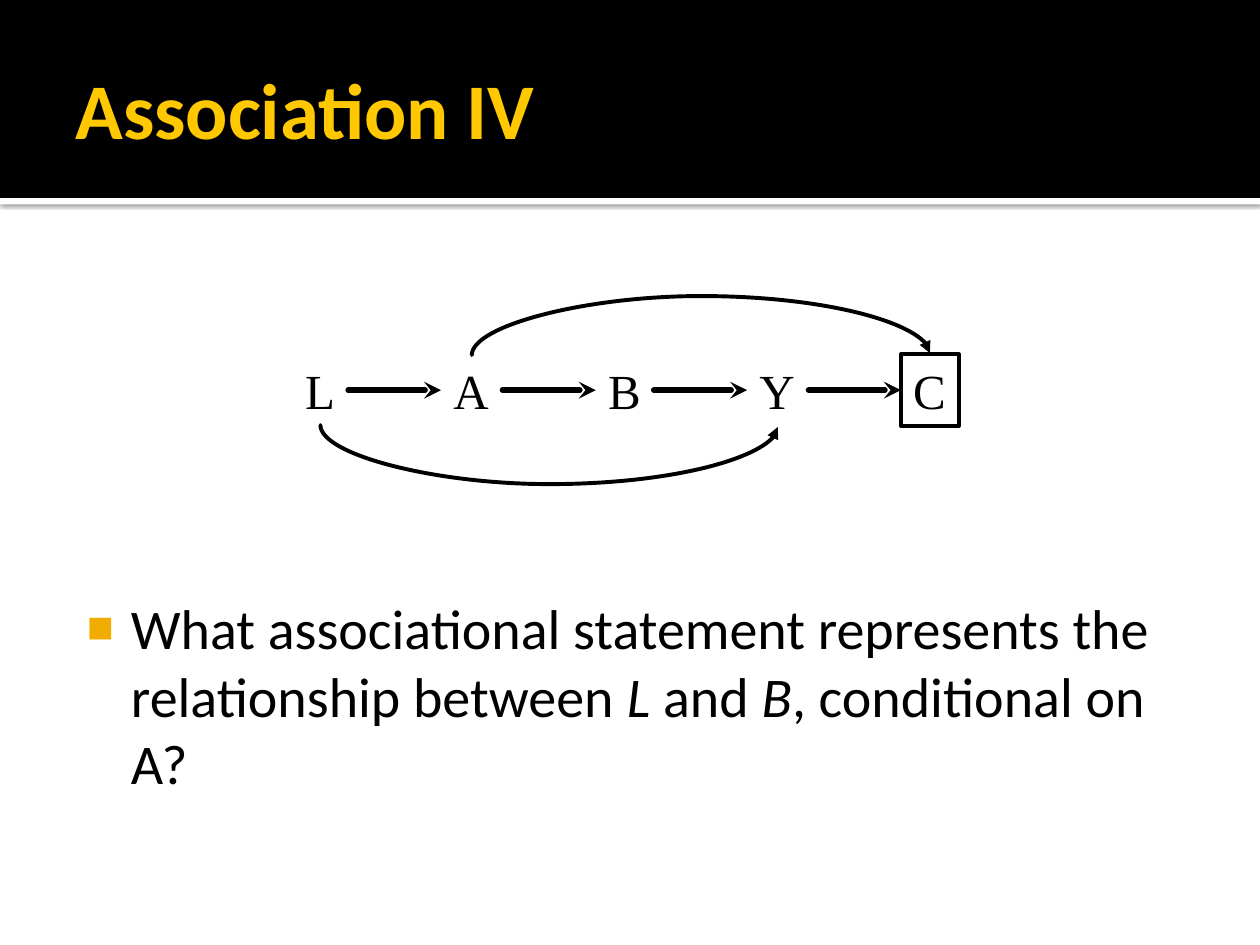
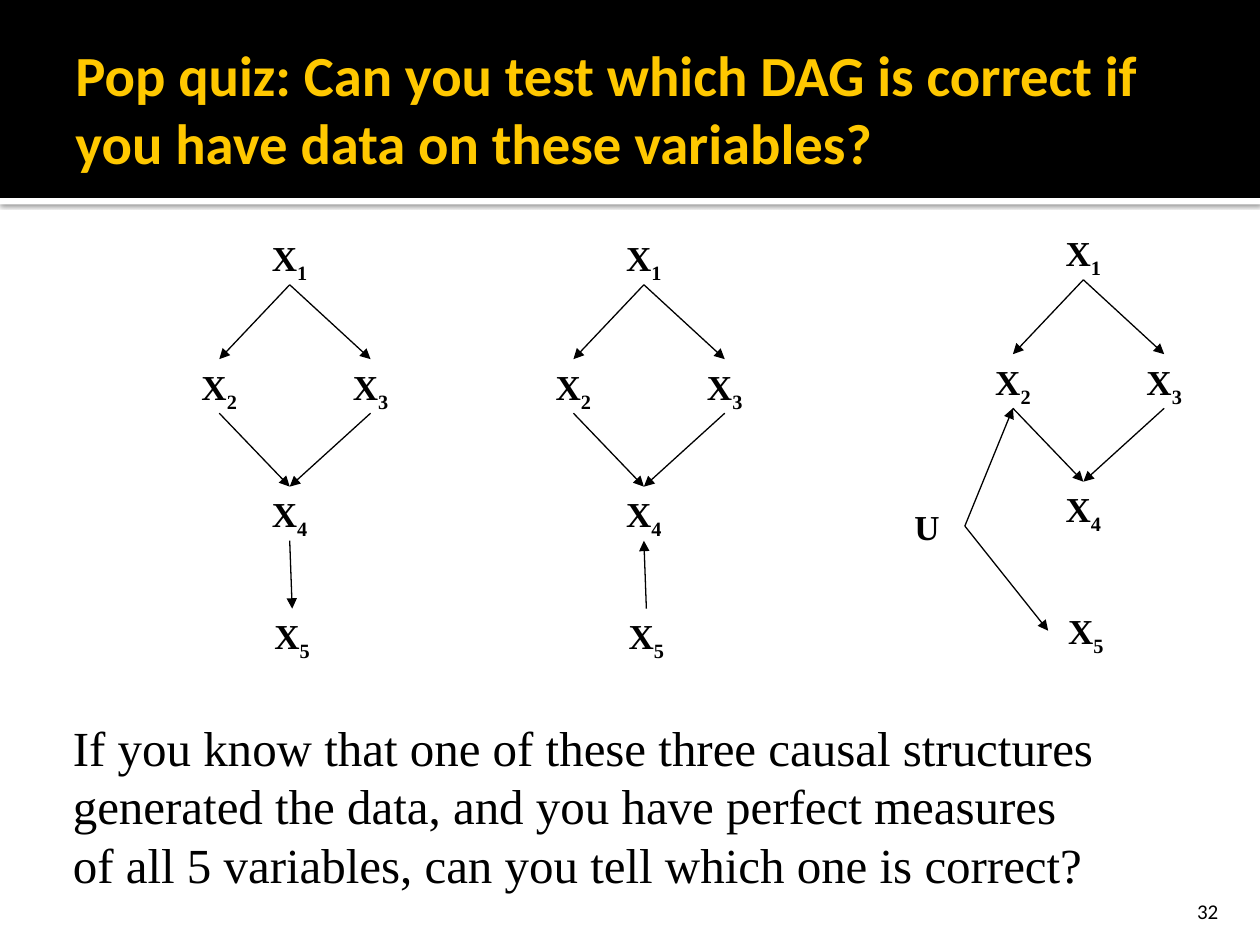
from dataclasses import dataclass

import lxml.etree
import pptx
import pptx.dml.color
import pptx.enum.shapes
import pptx.enum.text
import pptx.oxml.ns
import pptx.util

Cm = pptx.util.Cm
Pt = pptx.util.Pt
qn = pptx.oxml.ns.qn
Align = pptx.enum.text.PP_ALIGN
Anchor = pptx.enum.text.MSO_ANCHOR
AutoSize = pptx.enum.text.MSO_AUTO_SIZE
Connector = pptx.enum.shapes.MSO_CONNECTOR
RECTANGLE = pptx.enum.shapes.MSO_SHAPE.RECTANGLE

COLOURS = {"ink": "000000", "paper": "FFFFFF", "title": "FFC800", "bullet": "F0AD00"}
SANS, SERIF = "Calibri", "Times New Roman"
TOP, LEFT, BOTTOM, RIGHT = range(4)
CURVE_DEPTH, CURVE_DROP = Cm(1.19), Cm(0.04)


@dataclass(frozen=True)
class Run:
    text: str
    italic: bool = False
    subscript: bool = False


@dataclass(frozen=True)
class Variable:
    name: str
    left: float
    top: float
    width: float
    height: float
    conditioned: bool = False


@dataclass(frozen=True)
class Edge:
    cause: str
    effect: str
    leave: int = BOTTOM
    enter: int = TOP


@dataclass(frozen=True)
class Dag:
    left: float
    top: float
    edges: tuple[Edge, ...]
    has_unmeasured: bool = False


CHAIN = [
    Variable("L", 5.9, 7.14, 1.12, 1.45),
    Variable("A", 8.89, 7.14, 1.24, 1.45),
    Variable("B", 12.01, 7.14, 1.17, 1.45),
    Variable("Y", 15.06, 7.14, 1.24, 1.45),
    Variable("C", 18.16, 7.14, 1.17, 1.45, conditioned=True),
]
OFFSETS = {"X1": (0, 0), "X2": (-1.42, 2.59), "X3": (1.63, 2.59),
           "X4": (0, 5.16), "X5": (0.05, 7.62)}
UNMEASURED = {"U": (-3.15, 5.51)}
DIAMOND = (Edge("X1", "X2"), Edge("X1", "X3"), Edge("X2", "X4"), Edge("X3", "X4"))
DAGS = [
    Dag(5.08, 4.65, DIAMOND + (Edge("X4", "X5"),)),
    Dag(12.22, 4.65, DIAMOND + (Edge("X5", "X4", TOP, BOTTOM),)),
    Dag(21.08, 4.55, DIAMOND + (Edge("U", "X2", RIGHT, BOTTOM),
                                Edge("U", "X5", RIGHT, LEFT)), has_unmeasured=True),
]


def rgb(colour: str) -> pptx.dml.color.RGBColor:
    return pptx.dml.color.RGBColor.from_string(COLOURS[colour])


def add_xml(parent, tag: str, **attributes: str):
    return lxml.etree.SubElement(parent, qn(tag), **attributes)


def write(frame, runs: list[Run], *, size: float, font: str = SERIF, colour: str = "ink",
          bold: bool = False, align=Align.LEFT, anchor=Anchor.TOP, wrap: bool = True,
          auto_size=AutoSize.NONE, lead: bool = False):
    frame.word_wrap = wrap
    frame.auto_size = auto_size
    frame.vertical_anchor = anchor
    paragraph = frame.paragraphs[0]
    paragraph.alignment = align
    if lead:
        before = add_xml(paragraph._p.get_or_add_pPr(), "a:spcBef")
        add_xml(before, "a:spcPct", val="20000")
    for part in runs:
        run = paragraph.add_run()
        run.text = part.text
        run.font.name, run.font.size = font, Pt(size)
        run.font.bold, run.font.italic = bold, part.italic
        run.font.color.rgb = rgb(colour)
        if part.subscript:
            run.font._element.set("baseline", "-25000")
    return paragraph


def place(shape, left: float, top: float, width: float, height: float) -> None:
    shape.left, shape.top = Cm(left), Cm(top)
    shape.width, shape.height = Cm(width), Cm(height)


def set_insets(frame, left: float, top: float, right: float, bottom: float) -> None:
    frame.margin_left, frame.margin_top = Cm(left), Cm(top)
    frame.margin_right, frame.margin_bottom = Cm(right), Cm(bottom)


def add_text(slide, left: float, top: float, width: float, height: float,
             runs: list[Run], **text_format):
    box = slide.shapes.add_textbox(Cm(left), Cm(top), Cm(width), Cm(height))
    write(box.text_frame, runs, **text_format)
    return box


def add_master_bands(prs, slide) -> None:
    bands = [("paper", 3.99, 0.13), ("ink", 0, 3.99)]
    for index, (colour, top, height) in enumerate(bands):
        band = slide.shapes.add_shape(RECTANGLE, 0, Cm(top), prs.slide_width, Cm(height))
        band.fill.solid()
        band.fill.fore_color.rgb = rgb(colour)
        band.line.fill.background()
        band.shadow.inherit = False
        if colour == "paper":
            shadow = add_xml(band._element.spPr.find(qn("a:effectLst")), "a:outerShdw",
                             blurRad=str(Pt(2.5)), dist=str(Pt(0.8)), dir="5400000",
                             algn="t", rotWithShape="0")
            tint = add_xml(shadow, "a:srgbClr", val=COLOURS["ink"])
            add_xml(tint, "a:alpha", val="60000")
        band._element.nvSpPr.cNvPr.set("id", str(20 + index))
        prs.slide_master.shapes._spTree.insert(2 + index, band._element)


def set_title(slide, text: str, size: float) -> None:
    title = slide.shapes.title
    place(title, 1.27, 0.43, 22.86, 3.48)
    set_insets(title.text_frame, 0.25, 0.13, 0.13, 0.13)
    write(title.text_frame, [Run(text)], size=size, font=SANS, colour="title",
          bold=True, anchor=Anchor.MIDDLE)


def set_question(slide, runs: list[Run]) -> None:
    question = slide.placeholders[1]
    place(question, 1.27, 4.93, 22.86, 12.85)
    set_insets(question.text_frame, 0.15, 7.04, 0.25, 0.13)
    paragraph = write(question.text_frame, runs, size=32, font=SANS)
    paragraph.space_before = Pt(0)
    properties = paragraph._p.get_or_add_pPr()
    properties.set("marL", str(Cm(1.22)))
    properties.set("indent", str(-Cm(0.89)))
    add_xml(add_xml(properties, "a:buClr"), "a:srgbClr", val=COLOURS["bullet"])
    add_xml(properties, "a:buSzPct", val="80000")
    add_xml(properties, "a:buFont", typeface=SERIF)
    add_xml(properties, "a:buChar", char="■")


def style_arrow(arrow, width: float, head: str, cap: str) -> None:
    arrow.line.color.rgb = rgb("ink")
    arrow.line.width = Pt(width)
    line = arrow.line._get_or_add_ln()
    line.set("cap", cap)
    add_xml(line, "a:tailEnd", type=head)
    add_xml(arrow._element.spPr, "a:effectLst")


def add_arrow(slide, cause, effect, leave: int, enter: int, *, width: float = 0.75,
              head: str = "triangle", cap: str = "flat") -> None:
    arrow = slide.shapes.add_connector(Connector.STRAIGHT, 0, 0, 0, 0)
    arrow.begin_connect(cause, leave)
    arrow.end_connect(effect, enter)
    style_arrow(arrow, width, head, cap)


def add_curve(slide, cause, effect, above: bool) -> None:
    start = cause.left + cause.width // 2
    end = effect.left + effect.width // 2
    middle = (start + end) // 2
    level = cause.top if above else cause.top + cause.height
    left, top = middle - CURVE_DROP // 2, level - (end - start) // 2
    curve = slide.shapes.add_connector(Connector.CURVE, left, top,
                                       left + CURVE_DROP, top + end - start)
    frame = curve._element.spPr.find(qn("a:xfrm"))
    frame.set("rot", "5400000" if above else "16200000")
    frame.set("flipH", "1")
    if above:
        frame.set("flipV", "1")
    geometry = curve._element.spPr.find(qn("a:prstGeom"))
    guides = geometry.find(qn("a:avLst"))
    if guides is None:
        guides = add_xml(geometry, "a:avLst")
    depth = round(CURVE_DEPTH / CURVE_DROP * 100000)
    add_xml(guides, "a:gd", name="adj1", fmla=f"val {depth}")
    style_arrow(curve, 2.25, "triangle", "rnd")


def add_variable(slide, variable: Variable):
    place_at = (variable.left, variable.top, variable.width, variable.height)
    text_format = dict(size=28, auto_size=AutoSize.SHAPE_TO_FIT_TEXT, lead=True)
    if not variable.conditioned:
        return add_text(slide, *place_at, [Run(variable.name)], wrap=False, **text_format)
    box = slide.shapes.add_shape(RECTANGLE, *map(Cm, place_at))
    box.fill.background()
    box.line.color.rgb = rgb("ink")
    box.line.width = Pt(2)
    box.shadow.inherit = False
    write(box.text_frame, [Run(variable.name)], **text_format)
    return box


def add_dag(slide, dag: Dag) -> None:
    offsets = OFFSETS | (UNMEASURED if dag.has_unmeasured else {})
    variables = {}
    for name, (dx, dy) in offsets.items():
        runs = [Run(name[0])] + [Run(digit, subscript=True) for digit in name[1:]]
        variables[name] = add_text(slide, dag.left + dx, dag.top + dy, 1.52, 1.09, runs,
                                   size=20, bold=True, align=Align.CENTER,
                                   auto_size=AutoSize.SHAPE_TO_FIT_TEXT)
    for edge in dag.edges:
        add_arrow(slide, variables[edge.cause], variables[edge.effect],
                  edge.leave, edge.enter)


def build_association(slide) -> None:
    set_title(slide, "Association IV", 45)
    set_question(slide, [
        Run("What associational statement represents the relationship between "),
        Run("L", italic=True), Run(" and "), Run("B", italic=True),
        Run(", conditional on A?"),
    ])
    chain = {variable.name: add_variable(slide, variable) for variable in CHAIN}
    links = list(chain.values())
    for cause, effect in zip(links, links[1:]):
        add_arrow(slide, cause, effect, RIGHT, LEFT, width=3.25, head="stealth", cap="rnd")
    add_curve(slide, chain["L"], chain["Y"], above=False)
    add_curve(slide, chain["A"], chain["C"], above=True)


def build_dag_test(slide) -> None:
    set_title(slide, "Pop quiz: Can you test which DAG is correct if you have data "
                     "on these variables?", 32.4)
    for dag in DAGS:
        add_dag(slide, dag)
    add_text(slide, 1.22, 14.33, 21.36, 3.84, [Run(
        "If you know that one of these three causal structures generated the data, "
        "and you have perfect measures of all 5 variables, can you tell which one "
        "is correct?")], size=28, auto_size=AutoSize.SHAPE_TO_FIT_TEXT, lead=True)
    add_text(slide, 22.78, 17.98, 2.03, 0.76, [Run("32")], size=12, font=SANS,
             align=Align.RIGHT, lead=True)


def main() -> None:
    prs = pptx.Presentation()
    prs.slide_width, prs.slide_height = Cm(25.4), Cm(19.05)
    association = prs.slides.add_slide(prs.slide_layouts[1])
    dag_test = prs.slides.add_slide(prs.slide_layouts[5])
    add_master_bands(prs, association)
    build_association(association)
    build_dag_test(dag_test)
    prs.save("out.pptx")


if __name__ == "__main__":
    main()
